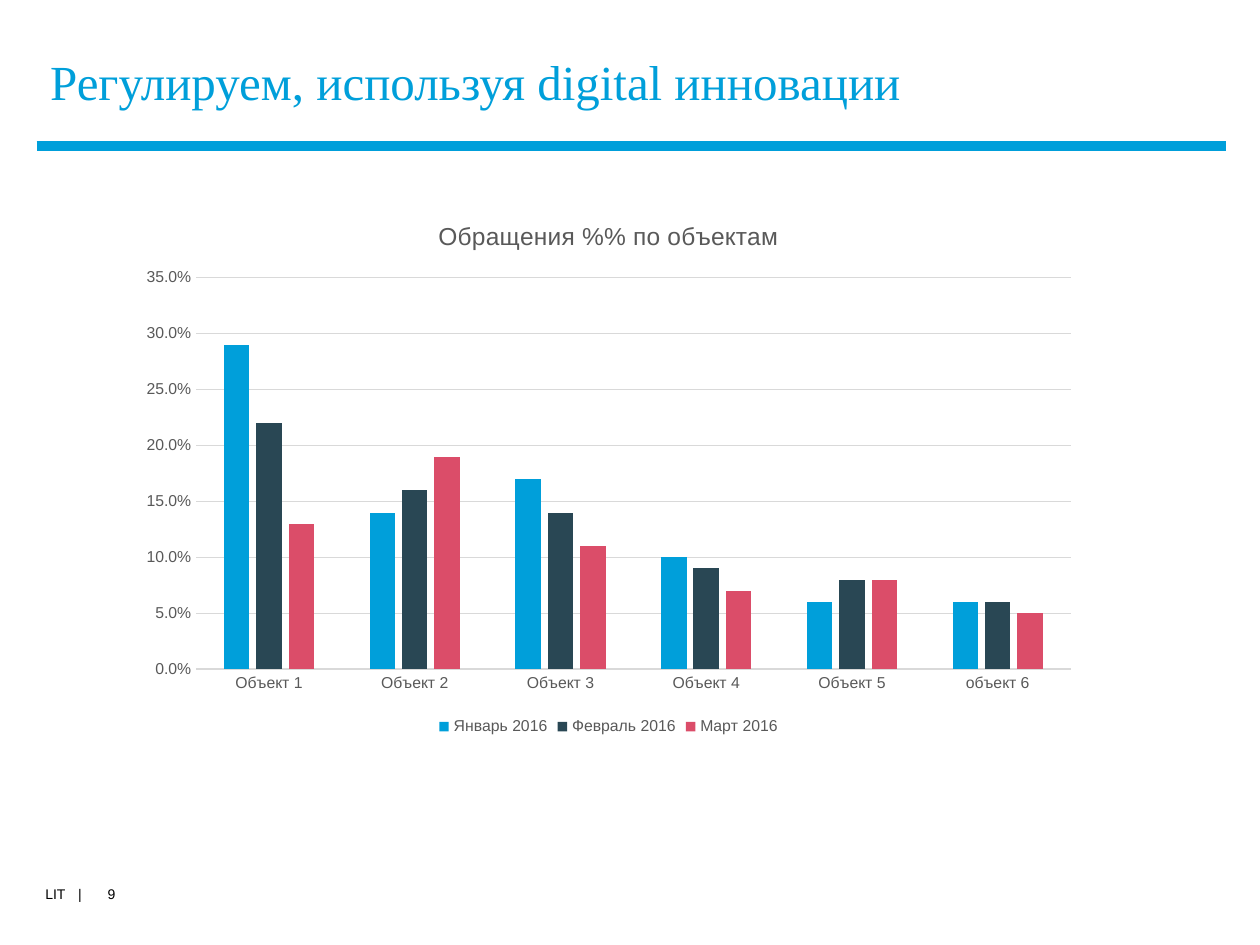
from lxml.etree import SubElement
from pptx import Presentation
from pptx.chart.data import CategoryChartData
from pptx.dml.color import RGBColor
from pptx.enum.chart import XL_CHART_TYPE, XL_LEGEND_POSITION, XL_TICK_MARK
from pptx.enum.shapes import MSO_CONNECTOR
from pptx.enum.text import MSO_ANCHOR, PP_ALIGN
from pptx.oxml.ns import qn
from pptx.util import Inches, Pt

BLUE, NAVY, ROSE = "009FDA", "294754", "DB4D69"
BLACK, GREY, PALE = "000000", "595959", "D9D9D9"
OBJECTS = ["Объект 1", "Объект 2", "Объект 3", "Объект 4", "Объект 5", "объект 6"]
MONTHS = [
    ("Январь 2016", BLUE, [0.29, 0.14, 0.17, 0.1, 0.06, 0.06]),
    ("Февраль 2016", NAVY, [0.22, 0.16, 0.14, 0.09, 0.08, 0.06]),
    ("Март 2016", ROSE, [0.13, 0.19, 0.11, 0.07, 0.08, 0.05]),
]


def rgb(value):
    """Turn a hex string into a colour."""
    return RGBColor.from_string(value)


def set_font(font, size, color, name="Arial"):
    """Set size, colour and typeface of a font."""
    font.size, font.name = Pt(size), name
    font.color.rgb = rgb(color)


def set_line(line, color, width):
    """Set colour and width of a line."""
    line.color.rgb = rgb(color)
    line.width = Pt(width)


def add_text(s, text, box, size, color, name="Arial", insets=(0, 0, 0, 0),
             anchor=MSO_ANCHOR.TOP, align=PP_ALIGN.LEFT, spacing=1.0, tab=None):
    """Add a one-paragraph text box, with an optional tab stop in inches."""
    sp = s.shapes.add_textbox(*map(Inches, box))
    tf = sp.text_frame
    tf.word_wrap, tf.vertical_anchor = True, anchor
    tf.margin_left, tf.margin_top, tf.margin_right, tf.margin_bottom = map(Inches, insets)
    p = tf.paragraphs[0]
    p.text, p.alignment, p.line_spacing = text, align, spacing
    if tab:
        stops = SubElement(p._p.get_or_add_pPr(), qn("a:tabLst"))
        SubElement(stops, qn("a:tab"), pos=str(Inches(tab)), algn="l")
    for r in p.runs:
        set_font(r.font, size, color, name)


def add_rule(s, left, right, y, color, width):
    """Add a horizontal rule without a shadow."""
    rule = s.shapes.add_connector(
        MSO_CONNECTOR.STRAIGHT, Inches(left), Inches(y), Inches(right), Inches(y))
    set_line(rule.line, color, width)
    SubElement(rule._element.spPr, qn("a:effectLst"))


def style_axes(chart):
    """Style the category and value axes."""
    for axis in (chart.category_axis, chart.value_axis):
        axis.major_tick_mark = axis.minor_tick_mark = XL_TICK_MARK.NONE
        set_font(axis.tick_labels.font, 9, GREY)
    set_line(chart.category_axis.format.line, PALE, 0.75)
    values = chart.value_axis
    values.minimum_scale, values.maximum_scale, values.major_unit = 0, 0.35, 0.05
    values.tick_labels.number_format = "0.0%"
    values.tick_labels.number_format_is_linked = False
    values.format.line.fill.background()
    set_line(values.major_gridlines.format.line, PALE, 0.75)


def add_column_chart(s, title, box):
    """Add the clustered columns of requests by object and month."""
    data = CategoryChartData(number_format="0.0%")
    data.categories = OBJECTS
    for month, _, shares in MONTHS:
        data.add_series(month, shares)
    chart = s.shapes.add_chart(
        XL_CHART_TYPE.COLUMN_CLUSTERED, *map(Inches, box), data).chart
    set_font(chart.font, 10, BLACK)
    chart.has_title = True
    tf = chart.chart_title.text_frame
    tf.text = title
    r = tf.paragraphs[0].runs[0]
    set_font(r.font, 14, GREY)
    r.font.bold = False
    chart.chart_title.include_in_layout = False
    chart.has_legend = True
    chart.legend.position = XL_LEGEND_POSITION.BOTTOM
    chart.legend.include_in_layout = False
    set_font(chart.legend.font, 9, GREY)
    plot = chart.plots[0]
    plot.gap_width, plot.overlap, plot.vary_by_categories = 219, -27, False
    for series, (_, color, _) in zip(plot.series, MONTHS):
        series.format.fill.solid()
        series.format.fill.fore_color.rgb = rgb(color)
        series.invert_if_negative = False
    style_axes(chart)


def main():
    """Build and save the slide."""
    prs = Presentation()
    prs.slide_width, prs.slide_height = Inches(10), Inches(7.5)
    s = prs.slides.add_slide(prs.slide_layouts[6])
    add_rule(s, 0.29, 9.73, 1.16, BLUE, 6)
    add_text(s, "LIT\t|", (0.36, 7.03, 0.74, 0.3), 8, BLACK, tab=0.26)
    add_text(s, "Регулируем, используя digital инновации", (0.3, 0.24, 9.45, 0.87),
             28, BLUE, "Times New Roman", (0.1, 0.05, 0.1, 0.05),
             MSO_ANCHOR.MIDDLE, spacing=0.9)
    add_text(s, "9", (0.65, 6.98, 0.55, 0.28), 8, BLACK,
             insets=(0, 0.05, 0.08, 0.05), align=PP_ALIGN.CENTER)
    add_column_chart(s, "Обращения %% по объектам", (1.01, 1.57, 7.64, 4.31))
    prs.save("out.pptx")


if __name__ == "__main__":
    main()
